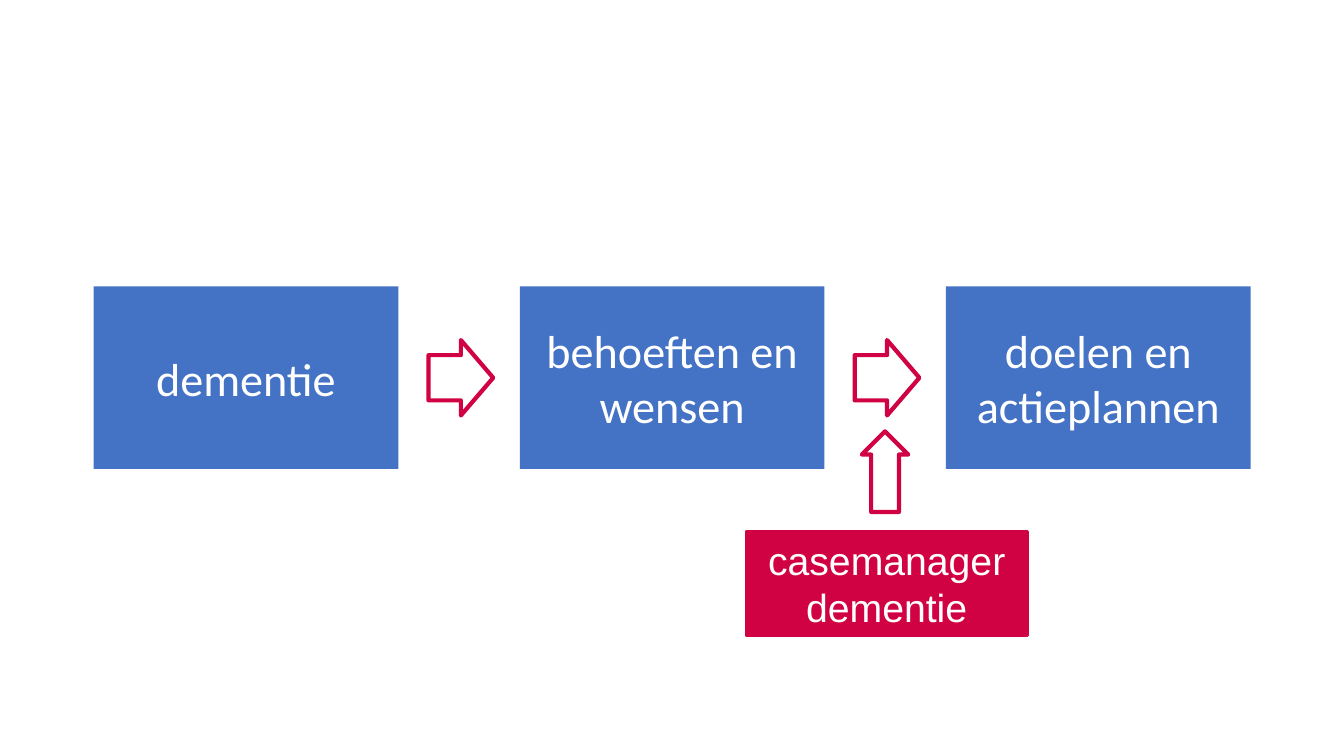
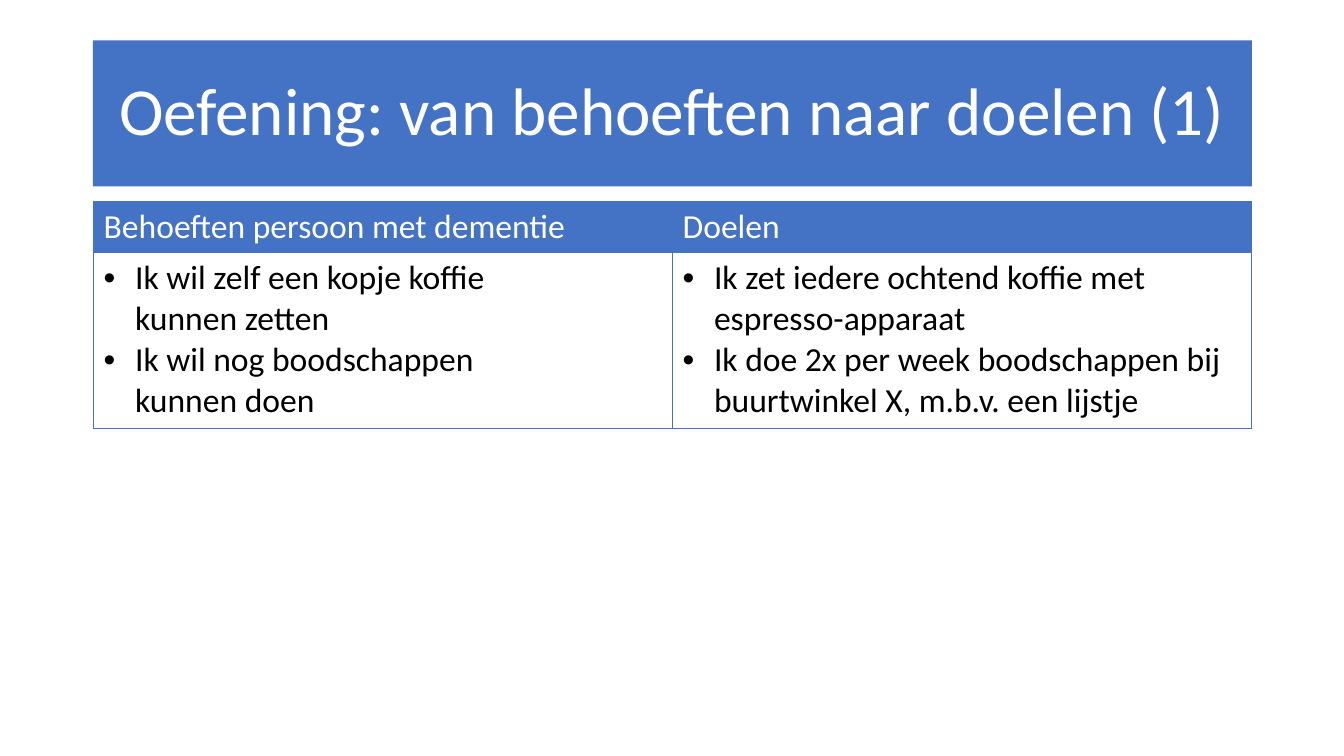
from dataclasses import dataclass
from typing import Optional

from lxml.etree import SubElement
from pptx import Presentation
from pptx.dml.color import RGBColor
from pptx.enum.shapes import MSO_SHAPE
from pptx.enum.text import MSO_ANCHOR, PP_ALIGN
from pptx.oxml import parse_xml
from pptx.oxml.ns import nsdecls, qn
from pptx.util import Cm, Pt

BLUE = RGBColor(0x44, 0x72, 0xC4)
CRIMSON = RGBColor(0xD0, 0x02, 0x43)
WHITE = RGBColor(0xFF, 0xFF, 0xFF)
BLACK = RGBColor(0x00, 0x00, 0x00)

# Layout, in centimetres
LEFT = 2.36
STEP_WIDTH, STEP_HEIGHT, STEP_TOP, STEP_PITCH = 7.68, 4.6, 7.22, 10.74
ARROW_WIDTH, ARROW_HEIGHT, ARROW_OFFSET = 1.63, 1.9, 8.44
TABLE_WIDTH = 29.18
ROW_HEIGHTS = (1.28, 4.42)

STEPS = ("dementie", "behoeften en wensen", "doelen en actieplannen")


@dataclass(frozen=True)
class Box:
    left: float
    top: float
    width: float
    height: float


@dataclass(frozen=True)
class Column:
    heading: str
    items: tuple[str, ...]


COLUMNS = (
    Column("Behoeften persoon met dementie",
           ("Ik wil zelf een kopje koffie \vkunnen zetten",
            "Ik wil nog boodschappen \vkunnen doen")),
    Column("Doelen",
           ("Ik zet iedere ochtend koffie met espresso-apparaat",
            "Ik doe 2x per week boodschappen bij buurtwinkel X, m.b.v. een lijstje")),
)


def write_text(frame, *lines: str, size: float, color: RGBColor = WHITE,
               font: str = "Calibri", align: PP_ALIGN = PP_ALIGN.CENTER,
               spacing: Optional[float] = None, bullet: bool = False) -> None:
    """Fill a text frame with one paragraph per line."""
    frame.word_wrap = True
    for index, line in enumerate(lines):
        paragraph = frame.add_paragraph() if index else frame.paragraphs[0]
        paragraph.text = line
        paragraph.alignment = align
        if spacing:
            paragraph.line_spacing = spacing
        for run in paragraph.runs:
            run.font.name, run.font.size, run.font.bold = font, Pt(size), False
            run.font.color.rgb = color
        if bullet:
            add_bullet(paragraph)


def add_bullet(paragraph) -> None:
    properties = paragraph._p.get_or_add_pPr()
    properties.set("marL", str(Cm(0.79)))
    properties.set("indent", str(-Cm(0.79)))
    SubElement(properties, qn("a:buFont")).set("typeface", "Arial")
    SubElement(properties, qn("a:buChar")).set("char", "•")


def add_box(slide, kind: MSO_SHAPE, box: Box, fill: RGBColor,
            line: Optional[RGBColor] = None, line_width: float = 3):
    shape = slide.shapes.add_shape(
        kind, Cm(box.left), Cm(box.top), Cm(box.width), Cm(box.height))
    shape.shadow.inherit = False
    shape.fill.solid()
    shape.fill.fore_color.rgb = fill
    if line is None:
        shape.line.fill.background()
    else:
        shape.line.color.rgb = line
        shape.line.width = Pt(line_width)
    return shape


def add_arrow(slide, box: Box, rotation: float = 0) -> None:
    arrow = add_box(slide, MSO_SHAPE.RIGHT_ARROW, box, WHITE, CRIMSON)
    arrow.adjustments[0] = 0.6
    arrow.adjustments[1] = 0.5
    arrow.rotation = rotation


def style_cell(cell, fill: RGBColor) -> None:
    cell.fill.solid()
    cell.fill.fore_color.rgb = fill
    properties = cell._tc.get_or_add_tcPr()
    for index, side in enumerate("LRTB"):
        properties.insert(index, parse_xml(
            f'<a:ln{side} {nsdecls("a")} w="{Pt(1)}"><a:solidFill>'
            f'<a:srgbClr val="{BLUE}"/></a:solidFill></a:ln{side}>'))


def build_process_slide(slide) -> None:
    # Three steps with arrows between them
    arrow_top = STEP_TOP + (STEP_HEIGHT - ARROW_HEIGHT) / 2
    for index, label in enumerate(STEPS):
        left = LEFT + index * STEP_PITCH
        step = add_box(slide, MSO_SHAPE.RECTANGLE,
                       Box(left, STEP_TOP, STEP_WIDTH, STEP_HEIGHT), BLUE)
        frame = step.text_frame
        frame.margin_left = frame.margin_right = Cm(0.36)
        frame.margin_top = frame.margin_bottom = Cm(0.36)
        write_text(frame, label, size=33)
        if index < len(STEPS) - 1:
            add_arrow(slide, Box(left + ARROW_OFFSET, arrow_top,
                                 ARROW_WIDTH, ARROW_HEIGHT))

    # Case manager, pointing up at the second arrow
    manager = add_box(slide, MSO_SHAPE.RECTANGLE, Box(18.8, 13.39, 7.09, 2.62),
                      CRIMSON, CRIMSON, 2)
    manager.text_frame.vertical_anchor = MSO_ANCHOR.TOP
    write_text(manager.text_frame, "casemanager dementie", size=28, font="Arial")
    add_arrow(slide, Box(21.29, 11.3, 2.03, 1.17), rotation=270)


def build_exercise_slide(slide) -> None:
    # Title band
    band = add_box(slide, MSO_SHAPE.RECTANGLE, Box(2.34, 1.02, 29.21, 3.68), BLUE)
    write_text(band.text_frame, "Oefening: van behoeften naar doelen (1)",
               size=48, spacing=0.9)

    # Table of needs and goals
    table = slide.shapes.add_table(
        len(ROW_HEIGHTS), len(COLUMNS), Cm(LEFT), Cm(5.08),
        Cm(TABLE_WIDTH), Cm(sum(ROW_HEIGHTS))).table
    table.first_row = table.horz_banding = False
    for row, height in zip(table.rows, ROW_HEIGHTS):
        row.height = Cm(height)
    for index, column in enumerate(COLUMNS):
        table.columns[index].width = Cm(TABLE_WIDTH / len(COLUMNS))
        heading, body = table.cell(0, index), table.cell(1, index)
        style_cell(heading, BLUE)
        style_cell(body, WHITE)
        write_text(heading.text_frame, column.heading, size=24, align=PP_ALIGN.LEFT)
        write_text(body.text_frame, *column.items, size=24, color=BLACK,
                   align=PP_ALIGN.LEFT, bullet=True)


def main() -> None:
    presentation = Presentation()
    presentation.slide_width, presentation.slide_height = Cm(33.87), Cm(19.05)
    blank = presentation.slide_layouts[6]
    for build in (build_process_slide, build_exercise_slide):
        build(presentation.slides.add_slide(blank))
    presentation.save("out.pptx")


if __name__ == "__main__":
    main()
